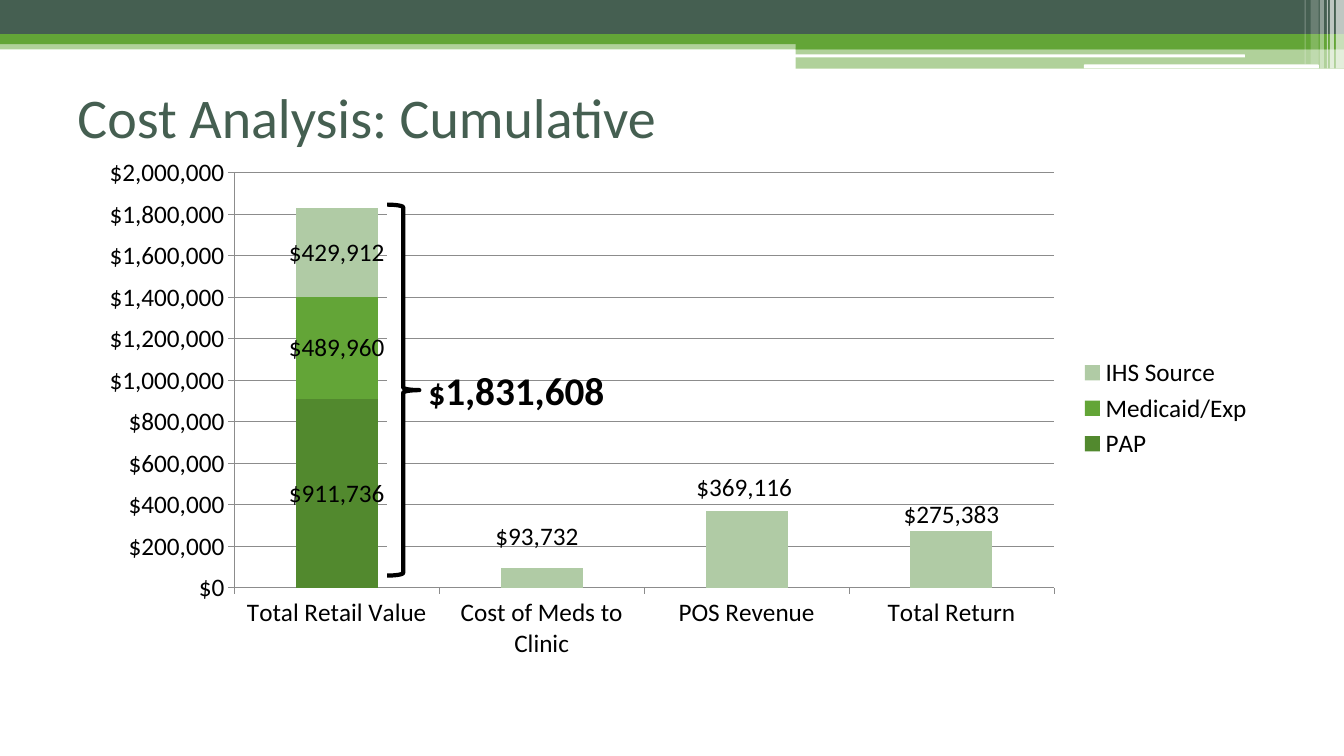
from dataclasses import dataclass

from lxml.etree import SubElement
from pptx import Presentation
from pptx.chart.chart import Chart
from pptx.chart.data import CategoryChartData
from pptx.chart.series import BarSeries
from pptx.dml.color import RGBColor
from pptx.enum.chart import XL_CHART_TYPE, XL_LABEL_POSITION, XL_LEGEND_POSITION, XL_TICK_MARK
from pptx.enum.shapes import MSO_SHAPE
from pptx.enum.text import MSO_ANCHOR
from pptx.oxml import parse_xml
from pptx.oxml.ns import nsdecls, qn
from pptx.shapes.autoshape import Shape
from pptx.slide import Slide
from pptx.text.text import Font
from pptx.util import Inches, Length, Pt

SLIDE_WIDTH = Inches(13.33)
SLIDE_HEIGHT = Inches(7.5)
TYPEFACE = "Calibri"
DARK_GREEN = RGBColor(0x45, 0x5F, 0x51)
GREEN = RGBColor(0x63, 0xA5, 0x37)
DEEP_GREEN = RGBColor(0x52, 0x89, 0x2E)
PALE_GREEN = RGBColor(0xB0, 0xCB, 0xA5)
GRAY = RGBColor(0x8C, 0x8C, 0x8C)
BLACK = RGBColor(0, 0, 0)
WHITE = RGBColor(255, 255, 255)
DOLLARS = '"$"#,##0'


@dataclass(frozen=True)
class Area:
    """Left, top, width and height in percent of the slide."""

    left: float
    top: float
    width: float
    height: float

    def lengths(self) -> tuple[Length, ...]:
        return (
            Length(SLIDE_WIDTH * self.left / 100),
            Length(SLIDE_HEIGHT * self.top / 100),
            Length(SLIDE_WIDTH * self.width / 100),
            Length(SLIDE_HEIGHT * self.height / 100),
        )


@dataclass(frozen=True)
class Band:
    area: Area
    color: RGBColor
    opacity: int = 100
    preset: MSO_SHAPE = MSO_SHAPE.RECTANGLE


@dataclass(frozen=True)
class Span:
    text: str
    size: int
    color: RGBColor
    bold: bool = False


@dataclass(frozen=True)
class Source:
    name: str
    values: tuple[int | None, ...]
    color: RGBColor


@dataclass(frozen=True)
class LabelShift:
    """Offsets in percent of the chart's size."""

    point: int
    across: float
    down: float


BANDS = (
    Band(Area(0, 5.33, 100, 1.2), GREEN, 50),
    Band(Area(0, 0, 100, 4.53), DARK_GREEN),
    Band(Area(0, 4.53, 100, 1.33), GREEN),
    Band(Area(59.2, 5.2, 40.8, 1.33), GREEN),
    Band(Area(59.2, 6.4, 40.8, 2.67), GREEN, 50),
    Band(Area(59.1, 7.2, 33.53, 0.4), WHITE, preset=MSO_SHAPE.ROUNDED_RECTANGLE),
    Band(Area(80.65, 8.53, 17.48, 0.53), WHITE, preset=MSO_SHAPE.ROUNDED_RECTANGLE),
    Band(Area(99.4, 0, 0.6, 9.07), WHITE, 65),
    Band(Area(98.95, 0, 0.3, 9.07), WHITE, 65),
    Band(Area(98.72, 0, 0.08, 9.07), WHITE, 60),
    Band(Area(98.2, 0, 0.3, 9.07), WHITE, 40),
    Band(Area(97.52, 0, 0.6, 8.53), WHITE, 20),
    Band(Area(97.07, 0, 0.08, 8.53), WHITE, 30),
)
CATEGORIES = ("Total Retail Value", "Cost of Meds to Clinic", "POS Revenue", "Total Return")
SOURCES = (
    Source("PAP", (911736, None, None, None), DEEP_GREEN),
    Source("Medicaid/Exp", (489960, None, None, None), GREEN),
    Source("IHS Source", (429912, 93732, 369116, 275383), PALE_GREEN),
)
LABEL_SHIFTS = (LabelShift(1, -0.4, -8), LabelShift(2, -0.2, -11.8), LabelShift(3, 0, -8.5))


def style_font(font: Font, size: int, color: RGBColor, bold: bool = False) -> None:
    font.name = TYPEFACE
    font.size = Pt(size)
    font.bold = bold
    font.color.rgb = color


def add_filled_shape(page: Slide, band: Band) -> Shape:
    shape = page.shapes.add_shape(band.preset, *band.area.lengths())
    shape.shadow.inherit = False
    shape.fill.solid()
    shape.fill.fore_color.rgb = band.color
    shape.line.fill.background()
    if band.opacity < 100:
        color = shape.fill._xPr.find(qn("a:solidFill"))[0]
        SubElement(color, qn("a:alpha"), val=str(band.opacity * 1000))
    return shape


def add_text(page: Slide, area: Area, spans: tuple[Span, ...], wrap: bool) -> None:
    box = page.shapes.add_textbox(*area.lengths())
    box.text_frame.word_wrap = wrap
    box.text_frame.vertical_anchor = MSO_ANCHOR.MIDDLE
    para = box.text_frame.paragraphs[0]
    for span in spans:
        run = para.add_run()
        run.text = span.text
        style_font(run.font, span.size, span.color, span.bold)


def manual_layout(settings: dict[str, str | float]):
    entries = "".join(f'<c:{name} val="{value}"/>' for name, value in settings.items())
    return parse_xml(
        f'<c:layout {nsdecls("c")}><c:manualLayout>{entries}</c:manualLayout></c:layout>'
    )


def shift_label(series: BarSeries, shift: LabelShift) -> None:
    label = series.points[shift.point].data_label
    style_font(label.font, 18, BLACK)
    label.position = XL_LABEL_POSITION.CENTER
    index = label._dLbl.find(qn("c:idx"))
    number_format = parse_xml(f'<c:numFmt {nsdecls("c")} sourceLinked="0"/>')
    number_format.set("formatCode", DOLLARS)
    index.addnext(number_format)
    index.addnext(manual_layout({"x": shift.across / 100, "y": shift.down / 100}))


def style_axes(chart: Chart) -> None:
    values = chart.value_axis
    values.minimum_scale = 0
    values.maximum_scale = 2_000_000
    values.major_unit = 200_000
    values.tick_labels.number_format = DOLLARS
    values.tick_labels.number_format_is_linked = False
    values.has_major_gridlines = True
    lines = [values.major_gridlines.format.line]
    for axis in (values, chart.category_axis):
        axis.major_tick_mark = XL_TICK_MARK.OUTSIDE
        style_font(axis.tick_labels.font, 18, BLACK)
        lines.append(axis.format.line)
    for line in lines:
        line.color.rgb = GRAY
        line.width = Pt(0.5)


def add_cost_chart(page: Slide) -> None:
    data = CategoryChartData(number_format=DOLLARS)
    data.categories = CATEGORIES
    for source in SOURCES:
        data.add_series(source.name, source.values)
    area = Area(6, 19.47, 88, 69.07)
    chart = page.shapes.add_chart(XL_CHART_TYPE.COLUMN_STACKED, *area.lengths(), data).chart
    style_font(chart.font, 18, BLACK)
    chart.has_title = False
    chart.has_legend = True
    chart.legend.position = XL_LEGEND_POSITION.RIGHT
    chart.legend.include_in_layout = False
    style_font(chart.legend.font, 18, BLACK)
    style_axes(chart)
    plot = chart.plots[0]
    plot.gap_width = 150
    plot.overlap = 100
    plot.vary_by_categories = False
    for series, source in zip(plot.series, SOURCES):
        series.format.fill.solid()
        series.format.fill.fore_color.rgb = source.color
        labels = series.data_labels
        labels.show_value = True
        labels.number_format = DOLLARS
        labels.number_format_is_linked = False
        style_font(labels.font, 18, BLACK)
    for shift in LABEL_SHIFTS:
        shift_label(plot.series[-1], shift)
    for leader_lines in chart._chartSpace.iter(qn("c:showLeaderLines")):
        leader_lines.set("val", "0")
    plot_area = chart._chartSpace.chart.plotArea
    for layout in plot_area.findall(qn("c:layout")):
        plot_area.remove(layout)
    edges = {"layoutTarget": "inner", "xMode": "edge", "yMode": "edge"}
    shares = {"x": 13 / 100, "y": 4.9 / 100, "w": 69.3 / 100, "h": 79.5 / 100}
    plot_area.insert(0, manual_layout(edges | shares))


def main() -> None:
    deck = Presentation()
    deck.slide_width = SLIDE_WIDTH
    deck.slide_height = SLIDE_HEIGHT
    page = deck.slides.add_slide(deck.slide_layouts[6])
    for band in BANDS:
        add_filled_shape(page, band)
    title = (Span("Cost Analysis: Cumulative", 40, DARK_GREEN),)
    add_text(page, Area(5.03, 7.6, 90, 15.6), title, True)
    add_cost_chart(page)
    total = (Span("$", 24, BLACK, True), Span("1,831,608", 28, BLACK, True))
    add_text(page, Area(31.13, 47.73, 14.78, 7.6), total, False)
    brace_area = Area(28.8, 27.07, 2.4, 49.07)
    brace = add_filled_shape(page, Band(brace_area, WHITE, preset=MSO_SHAPE.RIGHT_BRACE))
    brace.line.color.rgb = BLACK
    brace.line.width = Pt(3)
    deck.save("out.pptx")


if __name__ == "__main__":
    main()
